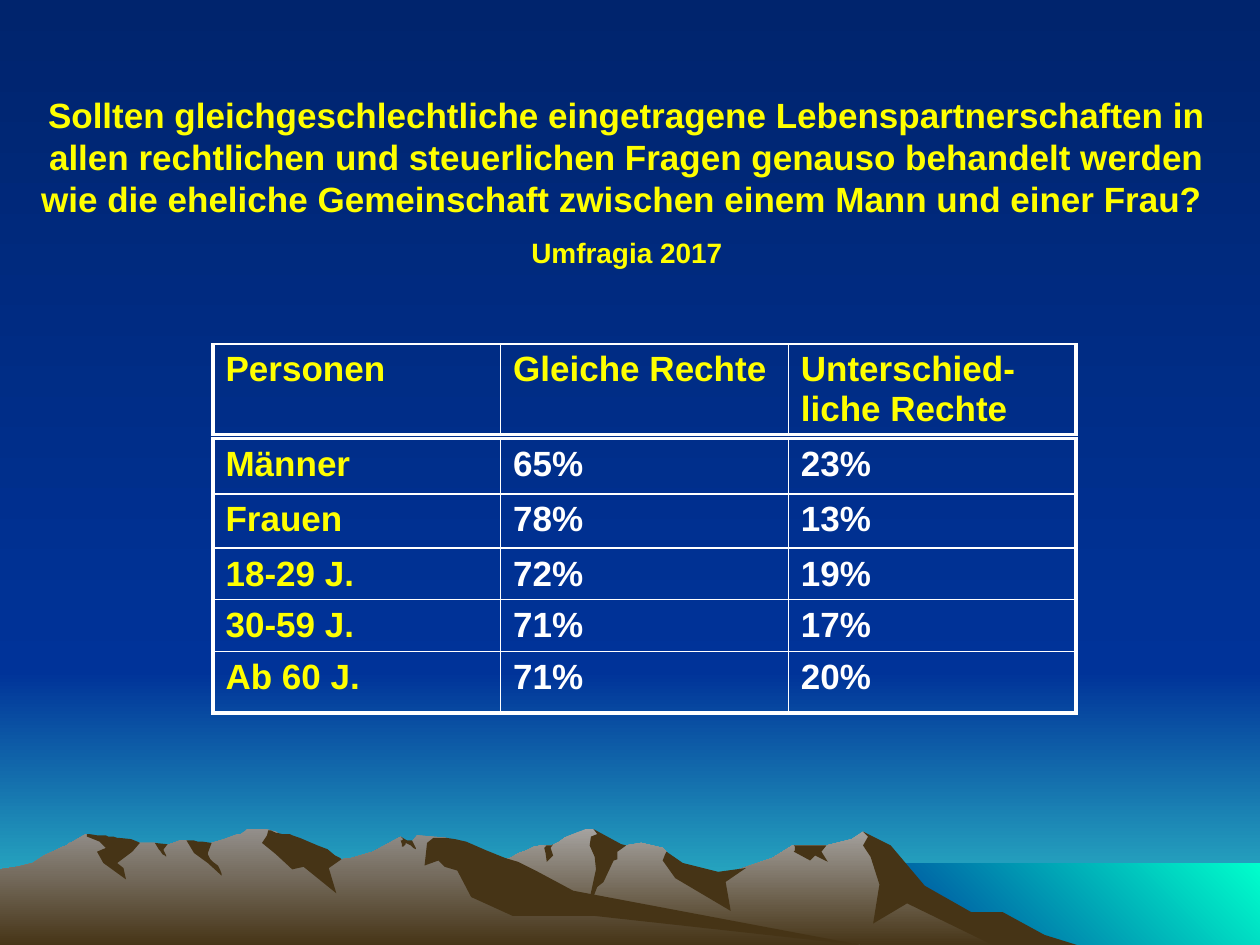
from lxml import etree
from pptx import Presentation, util as u
from pptx.dml.color import RGBColor
from pptx.enum import text as t
from pptx.oxml import ns

HUES = {
    "night": "00246D", "blue": "003399", "teal": "33CCCC", "mint": "00FFCC",
    "rock": "463416", "pale": "A5A29F", "grey": "938F8B",
    "gold": "FFFF00", "white": "FFFFFF",
}
UNIT = u.Inches(0.01)
THIN, THICK = 1, 2.25

SEA = [1000, 752, 683, 752, 683, 685, 1000, 685]
EAST = [
    802, 740, 778, 727, 764, 723, 723, 698, 702, 671, 685, 660, 676, 666, 656, 671,
    629, 671, 613, 681, 566, 697, 536, 690, 529, 676, 526, 673, 509, 669, 497, 671,
    486, 673, 474, 661, 471, 658, 465, 658, 450, 664, 448, 665, 444, 668, 438, 671,
    430, 671, 424, 672, 418, 675, 412, 677, 405, 681, 399, 683, 395, 684, 394, 685,
    355, 698, 327, 709, 277, 739, 258, 751, 821, 751,
]
WEST = [
    690, 751, 689, 751, 667, 748, 432, 712, 354, 665, 331, 663, 327, 668, 323, 668,
    318, 664, 296, 676, 279, 681, 271, 682, 260, 676, 236, 681, 223, 663, 222, 662,
    219, 660, 215, 659, 212, 658, 196, 658, 195, 659, 194, 660, 191, 662, 189, 662,
    186, 663, 178, 666, 168, 669, 160, 671, 148, 667, 143, 667, 132, 671, 128, 671,
    123, 669, 111, 669, 94, 671, 68, 662, 56, 669, 55, 669, 53, 671, 50, 672, 46, 674,
    35, 679, 26, 685, 14, 688, 0, 690, 0, 751,
]
EASTERN = [
    [796, 724, 771, 724, 734, 703, 707, 671, 685, 660, 689, 664, 685, 671, 691, 680,
     698, 702, 693, 733, 720, 717, 792, 752, 858, 751, 829, 742],
    [471, 658, 474, 662, 469, 664, 468, 671, 472, 680, 473, 690, 465, 727, 474, 704,
     479, 700, 487, 683, 490, 682, 490, 676, 497, 671, 493, 670],
    [529, 676, 528, 678, 526, 683, 536, 697, 580, 723, 576, 700, 592, 689, 570, 692,
     542, 685],
    [650, 671, 630, 671, 631, 672, 631, 675, 630, 676, 643, 683, 647, 679, 657, 684,
     652, 676, 656, 671],
    [433, 677, 432, 673, 434, 671, 432, 671, 438, 671, 439, 670, 437, 673, 439, 679,
     434, 684],
]
WESTERN = [
    [212, 663, 208, 669, 219, 678, 232, 690, 241, 688, 267, 709, 261, 689, 271, 682,
     270, 681, 266, 679, 260, 674, 252, 671, 245, 668, 238, 665, 232, 663, 230, 662,
     224, 662, 220, 661, 219, 661, 217, 660, 215, 659, 213, 659],
    [370, 668, 361, 666, 354, 665, 344, 665, 339, 669, 337, 687, 348, 683, 353, 688,
     363, 691, 374, 712, 407, 727, 472, 727, 690, 751, 683, 750, 455, 707, 427, 692,
     411, 684, 401, 681, 386, 675],
    [318, 667, 319, 667, 320, 666, 319, 665, 318, 664, 323, 667, 327, 667, 328, 669,
     329, 671, 330, 673, 330, 674, 328, 673, 326, 671, 322, 669, 322, 670, 321, 671,
     320, 672, 319, 672, 319, 670],
    [154, 667, 157, 668, 161, 668, 168, 669, 165, 677, 165, 678, 166, 680, 167, 682,
     169, 684, 173, 687, 175, 691, 176, 694, 176, 695, 165, 685, 154, 677, 148, 667],
    [133, 670, 130, 674, 130, 675, 131, 677, 132, 679, 132, 680, 131, 679, 129, 678,
     127, 675, 126, 674, 123, 669],
    [109, 668, 111, 669, 105, 676, 93, 685, 98, 689, 100, 698, 82, 685, 77, 676,
     84, 673, 79, 668, 69, 664, 69, 662, 71, 662, 77, 663, 84, 663, 86, 664, 90, 664,
     93, 665, 94, 665, 104, 666],
]

HEAD = [["Personen", "Gleiche Rechte", "Unterschied-liche Rechte"]]
BODY = [
    ["Männer", "65%", "23%"],
    ["Frauen", "78%", "13%"],
    ["18-29 J.", "72%", "19%"],
    ["30-59 J.", "71%", "17%"],
    ["Ab 60 J.", "71%", "20%"],
]
QUERY = ("Sollten gleichgeschlechtliche eingetragene Lebenspartnerschaften in allen "
         "rechtlichen und steuerlichen Fragen genauso behandelt werden wie die eheliche "
         "Gemeinschaft zwischen einem Mann und einer Frau? ")


def rgb(name):
    return RGBColor.from_string(HUES[name])


def write(para, words, size=20, hue="gold", align=t.PP_ALIGN.LEFT, gap=0):
    para.alignment = align
    para.space_before = u.Pt(gap)
    run = para.add_run()
    run.text = words
    run.font.name = "Arial"
    run.font.size = u.Pt(size)
    run.font.bold = True
    run.font.color.rgb = rgb(hue)


def shade(fill, first, last, angle=270):
    fill.gradient()
    fill.gradient_angle = angle
    for stop, name, place in zip(fill.gradient_stops, (first, last), (0, 1)):
        stop.color.rgb = rgb(name)
        stop.position = place


def edge(cell, side, width):
    props = cell._tc.get_or_add_tcPr()
    line = etree.SubElement(props, ns.qn("a:ln" + side), w=str(u.Pt(width)))
    solid = etree.SubElement(line, ns.qn("a:solidFill"))
    etree.SubElement(solid, ns.qn("a:srgbClr"), val=HUES["white"])


class Deck:
    def __init__(self):
        self.show = Presentation()
        self.show.slide_width = u.Inches(10)
        self.show.slide_height = u.Inches(7.5)
        self.slide = self.show.slides.add_slide(self.show.slide_layouts[5])
        shade(self.slide.background.fill, "night", "blue")

    def form(self, flat, first, last=None, angle=270):
        spots = list(zip(flat[::2], flat[1::2]))
        pen = self.slide.shapes.build_freeform(*spots[0], scale=UNIT)
        pen.add_line_segments(spots[1:], close=True)
        shape = pen.convert_to_shape()
        shape.shadow.inherit = False
        shape.line.fill.background()
        if last:
            shade(shape.fill, first, last, angle)
        else:
            shape.fill.solid()
            shape.fill.fore_color.rgb = rgb(first)

    def band(self, top, low, first, last):
        self.form([0, top, 1000, top, 1000, low, 0, low], first, last)

    def grid(self, data, top, rows, roof):
        count, width = len(data), len(data[0])
        frame = self.slide.shapes.add_table(
            count, width, u.Inches(1.69), u.Inches(top),
            u.Inches(6.85), u.Inches(sum(rows)))
        table = frame.table
        table.first_row = table.horz_banding = False
        for row, high in zip(table.rows, rows):
            row.height = u.Inches(high)
        for r, line in enumerate(data):
            for c, words in enumerate(line):
                cell = table.cell(r, c)
                edge(cell, "L", THIN if c else THICK)
                edge(cell, "R", THICK if c == width - 1 else THIN)
                edge(cell, "T", THIN if r else roof)
                edge(cell, "B", THICK if r == count - 1 else THIN)
                cell.fill.background()
                hue = "white" if c and data is BODY else "gold"
                write(cell.text_frame.paragraphs[0], words, hue=hue)

    def title(self, words, credit):
        box = self.slide.shapes.title
        box.left, box.top = u.Inches(0.27), u.Inches(0.74)
        box.width, box.height = u.Inches(9.41), u.Inches(1.4)
        frame = box.text_frame
        frame.word_wrap = True
        frame.auto_size = t.MSO_AUTO_SIZE.NONE
        frame.vertical_anchor = t.MSO_ANCHOR.MIDDLE
        frame.margin_left = frame.margin_right = 0
        frame.margin_top = frame.margin_bottom = 0
        mid = t.PP_ALIGN.CENTER
        write(frame.paragraphs[0], words, align=mid)
        write(frame.add_paragraph(), credit, size=16, align=mid, gap=9)
        self.slide.shapes._spTree.append(box._element)


def main():
    deck = Deck()
    deck.band(533, 750, "blue", "teal")
    deck.band(0, 533, "night", "blue")
    deck.form(SEA, "blue", "mint", angle=45)
    for ridge, pale, folds in ((EAST, "pale", EASTERN), (WEST, "grey", WESTERN)):
        deck.form(ridge, pale, "rock")
        for fold in folds:
            deck.form(fold, "rock")
    deck.grid(BODY, 3.48, [0.44, 0.43, 0.41, 0.4, 0.49], THICK)
    deck.grid(HEAD, 2.73, [0.71], THIN)
    deck.title(QUERY, "Umfragia 2017")
    deck.show.save("out.pptx")


if __name__ == "__main__":
    main()
